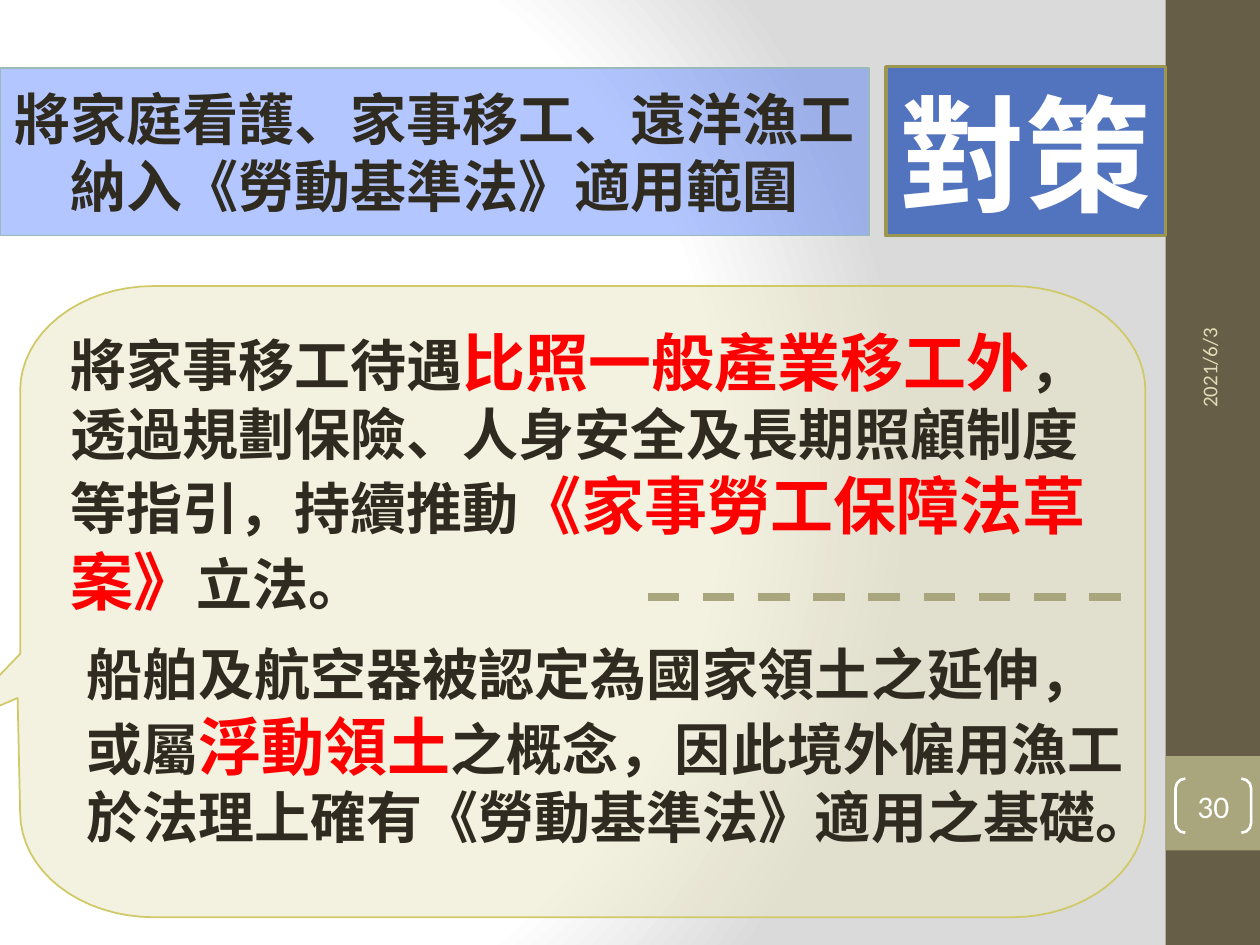
from math import cos, pi, sin

from lxml import etree
from pptx import Presentation
from pptx.dml.color import RGBColor
from pptx.enum.dml import MSO_LINE
from pptx.enum.shapes import MSO_CONNECTOR, MSO_SHAPE
from pptx.enum.text import MSO_ANCHOR, PP_ALIGN
from pptx.oxml import parse_xml
from pptx.oxml.ns import nsdecls, qn
from pptx.util import Inches, Pt

RECT, BRACKETS = MSO_SHAPE.RECTANGLE, MSO_SHAPE.DOUBLE_BRACKET
LEFT, CENTER = PP_ALIGN.LEFT, PP_ALIGN.CENTER
TOP, MIDDLE = MSO_ANCHOR.TOP, MSO_ANCHOR.MIDDLE
STRAIGHT, DASH = MSO_CONNECTOR.STRAIGHT, MSO_LINE.DASH

THEME = {
    "cjk": "Noto Sans CJK SC", "latin": "Calibri",
    "ink": "2F2B20", "red": "FF0000", "white": "FFFFFF", "date": "DFDCB7",
    "band": "675E47", "khaki": "A9A57C", "blue": "5273BD", "blue_edge": "9B9650",
    "pale": "3366FF", "pale_edge": "98BBBA", "cream": "E8E4C1", "cream_edge": "D0C967",
    "fade": "DADADA",
    "badge": 72, "strong": 36, "body": 32, "number": 18, "small": 12,
}
COLS, ROWS = 100, 75

prs = Presentation()
prs.slide_width, prs.slide_height = Inches(10), Inches(7.5)
slide = prs.slides.add_slide(prs.slide_layouts[6])
shapes = slide.shapes


def grid(*cells):
    """Turn alternating column and row counts into lengths."""
    units = prs.slide_width / COLS, prs.slide_height / ROWS
    return [round(n * units[i % 2]) for i, n in enumerate(cells)]


def write(s, runs, font="cjk", align=LEFT, anchor=TOP, inset=None):
    """Fill a shape with one paragraph of (text, size, colour) runs."""
    tf = s.text_frame
    tf.word_wrap = True
    tf.vertical_anchor = anchor
    if inset is not None:
        tf.margin_left = tf.margin_right = tf.margin_top = tf.margin_bottom = Inches(inset)
    p = tf.paragraphs[0]
    p.alignment = align
    p.font.name, p.font.bold = THEME[font], font == "cjk"
    for text, size, color in runs:
        r = p.add_run()
        r.text = text
        r.font.size = Pt(THEME[size])
        r.font.color.rgb = RGBColor.from_string(THEME[color])
        etree.SubElement(r.font._element, qn("a:ea"), typeface=THEME[font])


# Background: white fading to grey on the right
fill = slide.background.fill
fill.solid()
bg = slide.background._cSld.bg.bgPr
stops = "".join(
    f'<a:gs pos="{pos * 1000}"><a:srgbClr val="{THEME[c]}"/></a:gs>'
    for pos, c in ((0, "white"), (75, "white"), (100, "fade")))
bg.replace(bg.find(qn("a:solidFill")), parse_xml(
    f'<a:gradFill {nsdecls("a")} rotWithShape="1"><a:gsLst>{stops}</a:gsLst>'
    '<a:path path="circle"><a:fillToRect l="20000" t="50000" r="100000" b="50000"/>'
    '</a:path></a:gradFill>'))

# Side band and number tab
band = shapes.add_shape(RECT, *grid(92.5, 0, 7.5, ROWS))
tab = shapes.add_shape(RECT, *grid(92.5, 60, 7.5, 7.5))

# Callout: elliptical corners, tail on the left edge
left, top, right, bottom = 1.6, 22.7, 90.9, 72.8
rx, ry, steps = 10.6, 8.3, 16
corners = [(left + rx, top + ry), (right - rx, top + ry),
           (right - rx, bottom - ry), (left + rx, bottom - ry)]
outline = []
for i, (cx, cy) in enumerate(corners):
    for k in range(steps + 1):
        angle = pi + (i + k / steps) * pi / 2
        outline.append(grid(cx + rx * cos(angle), cy + ry * sin(angle)))
outline += [grid(1.4, 55.4), grid(-4, 57.7), grid(left, 51.9)]
builder = shapes.build_freeform(*outline[0])
builder.add_line_segments(outline[1:], close=True)
callout = builder.convert_to_shape()

# Heading and badge
badge = shapes.add_shape(RECT, *grid(70.3, 5.3, 22.2, 13.4))
heading = shapes.add_shape(RECT, *grid(0, 5.4, 69, 13.3))
write(badge, [("對策", "badge", "white")], align=CENTER, inset=0.08)
write(heading, [("將家庭看護、家事移工、遠洋漁工納入《勞動基準法》適用範圍", "body", "ink")],
      align=CENTER, anchor=MIDDLE, inset=0.04)

# Body texts
domestic = shapes.add_textbox(*grid(4.6, 25.2, 86.1, 24.6))
write(domestic, [
    ("將家事移工待遇", "body", "ink"),
    ("比照一般產業移工外", "strong", "red"),
    ("，透過規劃保險、人身安全及長期照顧制度等指引，持續推動", "body", "ink"),
    ("《家事勞工保障法草案》", "strong", "red"),
    ("立法。", "body", "ink"),
])
fishing = shapes.add_textbox(*grid(5.9, 50.3, 84.8, 17.8))
write(fishing, [
    ("船舶及航空器被認定為國家領土之延伸，或屬", "body", "ink"),
    ("浮動領土", "strong", "red"),
    ("之概念，因此境外僱用漁工於法理上確有《勞動基準法》適用之基礎。", "body", "ink"),
])

# Dashed divider
divider = shapes.add_connector(STRAIGHT, *grid(51.4, 47.4, 90.5, 47.4))
divider.line.color.rgb = RGBColor.from_string(THEME["khaki"])
divider.line.width = Pt(4.5)
divider.line.dash_style = DASH
etree.SubElement(divider._element.spPr, qn("a:effectLst"))

# Date and slide number
date = shapes.add_textbox(*grid(82.6, 18, 26.7, 4))
date.rotation = 270
write(date, [("2021/6/3", "small", "date")], font="latin", anchor=MIDDLE)
number = shapes.add_shape(BRACKETS, *grid(93.3, 61.8, 6, 4.3))
number.adjustments[0] = 0.18
write(number, [("30", "number", "white")], font="latin", align=CENTER,
      anchor=MIDDLE, inset=0)

# Fill, opacity in percent, line colour and line width
for s, color, opacity, edge, width in (
    (band, "band", 100, None, 0),
    (tab, "khaki", 100, None, 0),
    (callout, "cream", 50, "cream_edge", 1),
    (badge, "blue", 100, "blue_edge", 2),
    (heading, "pale", 37, "pale_edge", 1),
    (number, None, 100, "white", 1.5),
):
    s.shadow.inherit = False
    if color:
        s.fill.solid()
        s.fill.fore_color.rgb = RGBColor.from_string(THEME[color])
        if opacity < 100:
            clr = s._element.spPr.find(qn("a:solidFill"))[0]
            etree.SubElement(clr, qn("a:alpha"), val=str(opacity * 1000))
    else:
        s.fill.background()
    if edge:
        s.line.color.rgb = RGBColor.from_string(THEME[edge])
        s.line.width = Pt(width)
    else:
        s.line.fill.background()

prs.save("out.pptx")
